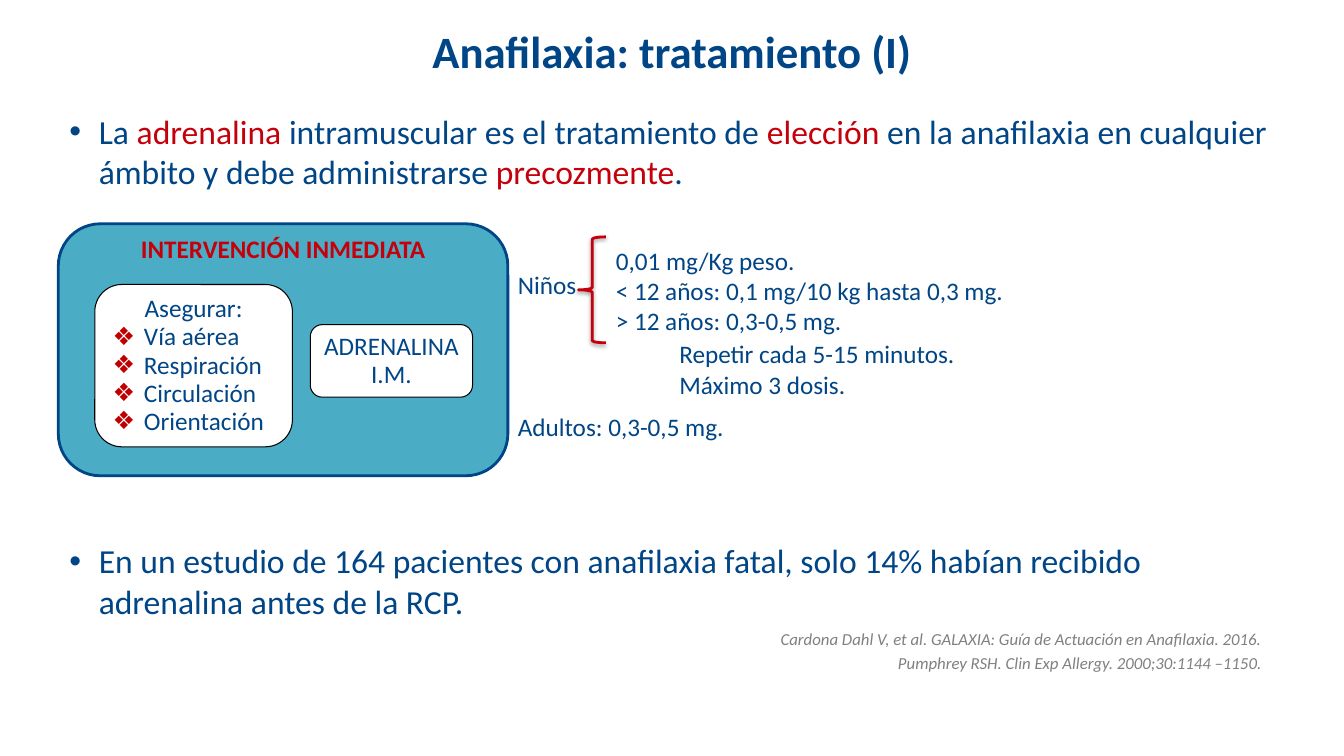
import pptx
import pptx.util
import pptx.dml.color
import pptx.enum.shapes
import pptx.enum.text
from lxml import etree
from pptx.oxml.ns import qn

Cm, Pt = pptx.util.Cm, pptx.util.Pt
SHAPE = pptx.enum.shapes.MSO_SHAPE
ALIGN = pptx.enum.text.PP_ALIGN
ANCHOR = pptx.enum.text.MSO_ANCHOR
COLORS = {"navy": "004586", "red": "C5000B", "bullet": "C00000", "teal": "4BACC6",
          "white": "FFFFFF", "black": "000000", "gray": "808080"}


def rgb(name):
    return pptx.dml.color.RGBColor.from_string(COLORS[name])


def add_bullet(paragraph, char, indent, hanging, color=None):
    props = paragraph._p.get_or_add_pPr()
    props.set("marL", str(Cm(indent)))
    props.set("indent", str(-Cm(hanging)))
    if color:
        bullet_color = etree.SubElement(props, qn("a:buClr"))
        etree.SubElement(bullet_color, qn("a:srgbClr")).set("val", COLORS[color])
    etree.SubElement(props, qn("a:buFont")).set("typeface", "Arial")
    etree.SubElement(props, qn("a:buChar")).set("char", char)


def style(font, size, color, bold=False, italic=False):
    font.name, font.size = "Calibri", Pt(size)
    font.bold, font.italic = bold, italic
    font.color.rgb = rgb(color)


def write(frame, lines, size=18, color="navy", align=ALIGN.LEFT, wrap=False,
          bold=False, italic=False, spacing=None, gap=0):
    frame.word_wrap = wrap
    frame.text = "\n".join(lines)
    for number, paragraph in enumerate(frame.paragraphs):
        paragraph.alignment = align
        if spacing:
            paragraph.line_spacing = spacing
        if gap and number:
            paragraph.space_before = Pt(gap)
        for run in paragraph.runs:
            style(run.font, size, color, bold, italic)


def add_text(slide, box, lines, **options):
    frame = slide.shapes.add_textbox(*map(Cm, box)).text_frame
    write(frame, lines, **options)
    return frame


def add_card(slide, box, fill, line, width):
    card = slide.shapes.add_shape(SHAPE.ROUNDED_RECTANGLE, *map(Cm, box))
    card.shadow.inherit = False
    card.fill.solid()
    card.fill.fore_color.rgb = rgb(fill)
    card.line.color.rgb = rgb(line)
    card.line.width = Pt(width)
    card.text_frame.vertical_anchor = ANCHOR.MIDDLE
    return card.text_frame


def add_statement(slide, box, parts, align=ALIGN.LEFT):
    """Bulleted sentence whose odd-numbered parts are highlighted."""
    frame = slide.shapes.add_textbox(*map(Cm, box)).text_frame
    frame.word_wrap = True
    paragraph = frame.paragraphs[0]
    paragraph.alignment = align
    add_bullet(paragraph, "•", 2.24, 0.74)
    for number, part in enumerate(parts):
        run = paragraph.add_run()
        run.text = part
        style(run.font, 24, "red" if number % 2 else "navy")


def add_intervention(slide, box):
    left, top = box[:2]
    # Panel and heading
    heading = add_card(slide, box, "teal", "navy", 2)
    heading.vertical_anchor = ANCHOR.TOP
    heading.margin_top = 0
    write(heading, ["INTERVENCIÓN INMEDIATA"], color="red", bold=True,
          align=ALIGN.CENTER, spacing=0.93)
    # Checks
    checks = add_card(slide, (left + 0.92, top + 1.53, 4.98, 4.09), "white", "black", 0.75)
    write(checks, ["Asegurar:", "Vía aérea", "Respiración", "Circulación", "Orientación"],
          wrap=True, spacing=0.93)
    checks.paragraphs[0].alignment = ALIGN.CENTER
    for check in checks.paragraphs[1:]:
        add_bullet(check, "❖", 0.79, 0.79, "bullet")
    # Drug
    drug = add_card(slide, (left + 6.35, top + 2.54, 4.09, 1.83), "white", "black", 0.75)
    write(drug, ["ADRENALINA", "I.M."], align=ALIGN.CENTER, spacing=0.93)


def add_doses(slide, box):
    left, top = box
    add_text(slide, (left, top + 0.68, 2.01, 1.02), ["Niños"])
    # Brace with a soft shadow
    brace = slide.shapes.add_shape(SHAPE.LEFT_BRACE, Cm(left + 1.78), Cm(top), Cm(0.69), Cm(2.67))
    brace.fill.background()
    brace.line.color.rgb = rgb("red")
    brace.line.width = Pt(2)
    brace.shadow.inherit = False
    effects = brace._element.spPr.find(qn("a:effectLst"))
    shadow = etree.SubElement(effects, qn("a:outerShdw"), blurRad=str(Pt(3.1)),
                              dist=str(Pt(1.6)), dir="5400000", rotWithShape="0")
    tint = etree.SubElement(shadow, qn("a:srgbClr"), val=COLORS["black"])
    etree.SubElement(tint, qn("a:alpha"), val="38000")
    # Doses
    add_text(slide, (left + 2.47, top + 0.08, 10.57, 2.57),
             ["0,01 mg/Kg peso.", "< 12 años: 0,1 mg/10 kg hasta 0,3 mg.",
              "> 12 años: 0,3-0,5 mg."])
    add_text(slide, (left + 4.07, top + 2.44, 7.52, 1.8),
             ["Repetir cada 5-15 minutos.", "Máximo 3 dosis."])
    add_text(slide, (left, top + 4.27, 5.77, 1.02), ["Adultos: 0,3-0,5 mg."])


def main():
    deck = pptx.Presentation()
    deck.slide_width, deck.slide_height = Cm(33.87), Cm(19.05)
    slide = deck.slides.add_slide(deck.slide_layouts[6])

    title = add_text(slide, (1.7, 0.43, 30.48, 1.68), ["Anafilaxia: tratamiento (I)"],
                     size=32, bold=True, align=ALIGN.CENTER, wrap=True)
    title.vertical_anchor = ANCHOR.MIDDLE
    add_statement(slide, (0, 2.66, 32.18, 2.3),
                  ["La ", "adrenalina", " intramuscular es el tratamiento de ", "elección",
                   " en la anafilaxia en cualquier ámbito y debe administrarse ",
                   "precozmente", "."], ALIGN.JUSTIFY)
    add_intervention(slide, (1.47, 5.64, 11.33, 6.35))
    add_doses(slide, (12.8, 5.97))
    add_statement(slide, (0, 13.49, 32.18, 2.3),
                  ["En un estudio de 164 pacientes con anafilaxia fatal, solo 14% habían "
                   "recibido adrenalina antes de la RCP."])
    # References
    add_text(slide, (0, 15.72, 32.05, 1.4),
             ["Cardona Dahl V, et al. GALAXIA: Guía de Actuación en Anafilaxia. 2016.",
              "Pumphrey RSH. Clin Exp Allergy. 2000;30:1144 –1150."],
             size=12, color="gray", italic=True, align=ALIGN.RIGHT, wrap=True, gap=2.9)
    deck.save("out.pptx")


if __name__ == "__main__":
    main()
